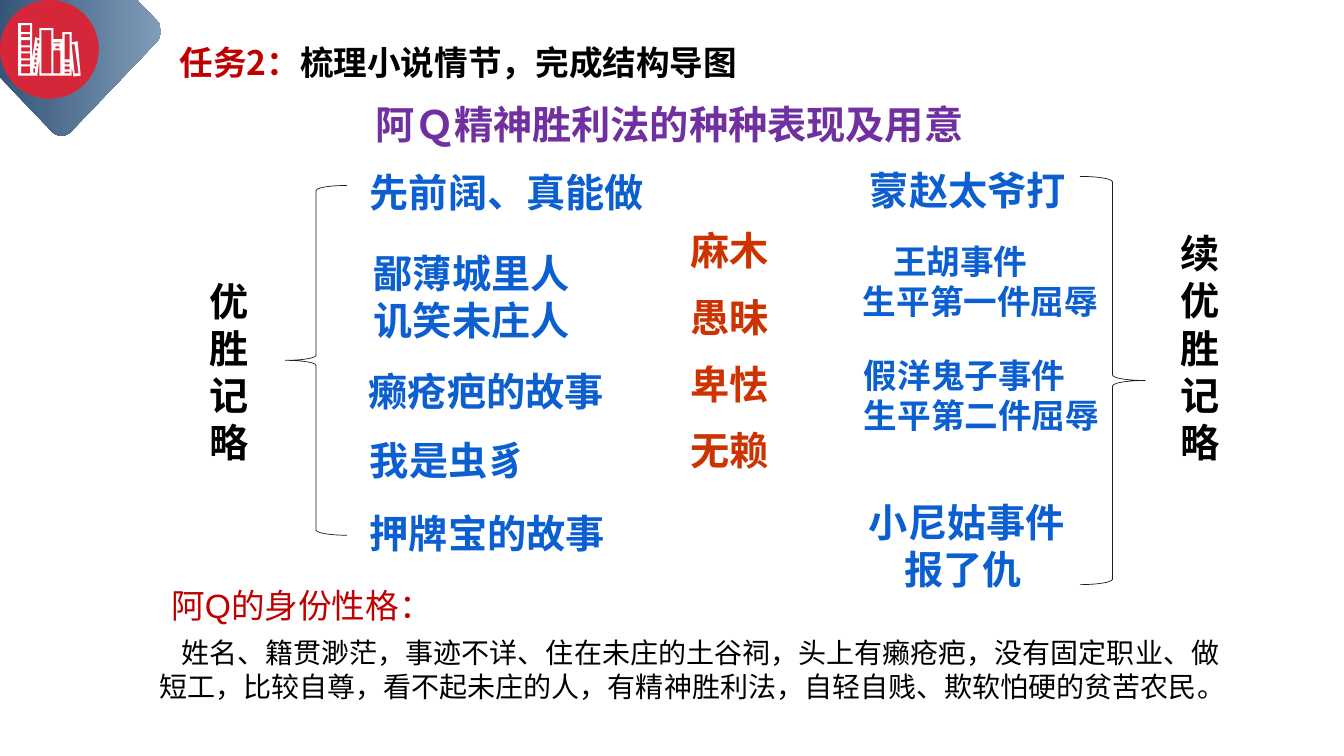
from pptx import Presentation
from pptx.dml.color import RGBColor
from pptx.enum.shapes import MSO_SHAPE
from pptx.enum.text import MSO_ANCHOR, MSO_AUTO_SIZE, PP_ALIGN
from pptx.util import Inches, Pt
from lxml.etree import SubElement
from pptx.oxml.ns import qn

SANS, CJK = "Arial", "Noto Sans CJK SC"
RED = RGBColor(0xC0, 0x00, 0x00)
CRIMSON = RGBColor(0xD5, 0x27, 0x39)
ORANGE = RGBColor(0xCC, 0x33, 0x00)
PURPLE = RGBColor(0x70, 0x30, 0xA0)
BLUE = RGBColor(0x0B, 0x5F, 0xD1)
BLACK = RGBColor(0x00, 0x00, 0x00)
WHITE = RGBColor(0xFF, 0xFF, 0xFF)
BRACE_INK = RGBColor(0x21, 0x1D, 0x1E)
SLATE, MIST = RGBColor(0x35, 0x56, 0x78), RGBColor(0x7F, 0x9C, 0xB9)


def write_run(paragraph, text, color, size, bold=True, font=SANS):
    """Append one formatted run, with the CJK face for Chinese characters."""
    run = paragraph.add_run()
    run.text = text
    for name, value in {"name": font, "size": Pt(size), "bold": bold}.items():
        setattr(run.font, name, value)
    run.font.color.rgb = color
    SubElement(run.font._element, qn("a:ea")).set("typeface", CJK)


def place_text(slide, box, lines, color, size=28, wrap=False, gap=0, indents=(), **style):
    """Put one paragraph per line in a text box, with optional first-line indents."""
    text_box = slide.shapes.add_textbox(*map(Inches, box))
    frame = text_box.text_frame
    frame.word_wrap = wrap
    frame.auto_size = MSO_AUTO_SIZE.SHAPE_TO_FIT_TEXT
    for index, line in enumerate(lines):
        paragraph = frame.add_paragraph() if index else frame.paragraphs[0]
        paragraph.space_before = Pt(gap if index else 0)
        write_run(paragraph, line, color, size, **style)
        if index < len(indents):
            paragraph._p.get_or_add_pPr().set("indent", str(Inches(indents[index])))


def curve(start, control_1, control_2, end, steps=8):
    """Sample a cubic curve into points after its start."""
    points = []
    for step in range(1, steps + 1):
        t = step / steps
        weights = ((1 - t) ** 3, 3 * t * (1 - t) ** 2, 3 * t * t * (1 - t), t ** 3)
        points.append(tuple(
            sum(w * p[axis] for w, p in zip(weights, (start, control_1, control_2, end)))
            for axis in (0, 1)))
    return points


def draw_outline(slide, left, top, contours):
    """Build one borderless shape from closed contours given in inches."""
    contours = [[(Inches(left + x), Inches(top + y)) for x, y in points]
                for points in contours]
    builder = slide.shapes.build_freeform(*contours[0][0], scale=1.0)
    for index, points in enumerate(contours):
        if index:
            builder.move_to(*points[0])
        builder.add_line_segments(points[1:], close=True)
    outline = builder.convert_to_shape()
    outline.shadow.inherit = False
    outline.line.fill.background()
    return outline


def rectangle(left, top, right, bottom):
    """Return the corners of an upright rectangle."""
    return [(left, top), (right, top), (right, bottom), (left, bottom)]


def draw_books(slide, left, top):
    """Draw the row of books as a silhouette with cut-out pages."""
    silhouette = [
        (0, 0), (0.14, 0), (0.14, 0.35), (0.17, 0.14), (0.21, 0.15), (0.21, 0.05),
        (0.35, 0.05), (0.35, 0.16), (0.44, 0.16), (0.44, 0.09), (0.53, 0.09),
        (0.53, 0.19), (0.59, 0.18), (0.62, 0.52), (0.55, 0.53), (0.53, 0.43),
        (0.53, 0.52), (0.21, 0.52), (0.21, 0.36), (0.19, 0.52), (0, 0.52)]
    first_book = [rectangle(0.03, y, 0.12, y + height) for y, height in (
        (0.02, 0.07), (0.11, 0.03), (0.17, 0.05), (0.24, 0.04),
        (0.30, 0.05), (0.37, 0.04), (0.43, 0.07))]
    leaning_book = [
        [(x, y), (x + 0.02, y), (x + 0.02, y + height), (x, y + height)]
        for x, y, height in (
            (0.19, 0.17, 0.03), (0.18, 0.23, 0.02), (0.17, 0.27, 0.03),
            (0.17, 0.32, 0.02), (0.16, 0.36, 0.03), (0.16, 0.41, 0.02),
            (0.15, 0.45, 0.04))]
    upright_books = [rectangle(*page) for page in (
        (0.23, 0.07, 0.33, 0.50), (0.35, 0.19, 0.42, 0.20), (0.37, 0.23, 0.41, 0.25),
        (0.35, 0.27, 0.42, 0.50), (0.46, 0.11, 0.51, 0.36), (0.46, 0.39, 0.51, 0.41),
        (0.46, 0.43, 0.51, 0.46), (0.46, 0.48, 0.51, 0.50))]
    last_book = [[(0.53, 0.21), (0.56, 0.21), (0.60, 0.50), (0.56, 0.50)]]
    books = draw_outline(slide, left, top, [silhouette] + first_book + leaning_book
                         + upright_books + last_book)
    books.fill.solid()
    books.fill.fore_color.rgb = WHITE


def corner_badge(slide, left, top):
    """Draw the rounded corner, the red disc and the books."""
    corner = [(0, 0), (1.36, 0), (1.56, 0.21)]
    corner += curve((1.56, 0.21), (1.61, 0.27), (1.61, 0.35), (1.56, 0.41))
    corner += [(0.7, 1.31)]
    corner += curve((0.7, 1.31), (0.65, 1.36), (0.57, 1.36), (0.52, 1.31))
    corner += [(0, 0.77)]
    backdrop = draw_outline(slide, left, top, [corner])
    backdrop.fill.gradient()
    backdrop.fill.gradient_angle = 0
    for stop, color in zip(backdrop.fill.gradient_stops, (SLATE, MIST)):
        stop.color.rgb = color
    disc = slide.shapes.add_shape(
        MSO_SHAPE.OVAL, Inches(left), Inches(top), Inches(0.98), Inches(0.98))
    disc.shadow.inherit = False
    disc.fill.solid()
    disc.fill.fore_color.rgb = CRIMSON
    disc.line.fill.background()
    draw_books(slide, left + 0.18, top + 0.23)


def task_title(slide, box):
    """Move and format the title placeholder."""
    title = slide.shapes.title
    for name, value in zip(("left", "top", "width", "height"), box):
        setattr(title, name, Inches(value))
    frame = title.text_frame
    for name, value in {"word_wrap": True, "auto_size": MSO_AUTO_SIZE.NONE,
                        "vertical_anchor": MSO_ANCHOR.TOP}.items():
        setattr(frame, name, value)
    paragraph = frame.paragraphs[0]
    paragraph.alignment = PP_ALIGN.LEFT
    write_run(paragraph, "任务2：", RED, 24, font=CJK)
    write_run(paragraph, "梳理小说情节，完成结构导图", BLACK, 24, font=CJK)


def brace(slide, kind, box):
    """Draw a thin unfilled brace."""
    bracket = slide.shapes.add_shape(kind, *map(Inches, box))
    bracket.shadow.inherit = False
    bracket.fill.background()
    bracket.line.color.rgb = BRACE_INK
    bracket.line.width = Pt(0.5)


def first_chapter(slide, left, top):
    """Place the first chapter's name, brace and episodes."""
    place_text(slide, (left, top + 1.08, 0.92, 1.99), ["优胜记略"], BLACK, wrap=True)
    brace(slide, MSO_SHAPE.LEFT_BRACE, (left + 0.85, top + 0.22, 0.61, 3.47))
    for x, y, width, lines in (
            (1.59, 0, 2.96, ["先前阔、真能做"]),
            (1.63, 0.8, 2.17, ["鄙薄城里人", "讥笑未庄人"]),
            (1.58, 1.97, 2.57, ["癞疮疤的故事"]),
            (1.59, 2.66, 1.78, ["我是虫豸"]),
            (1.59, 3.38, 2.57, ["押牌宝的故事"])):
        place_text(slide, (left + x, top + y, width, 0.1 + 0.47 * len(lines)), lines, BLUE)


def second_chapter(slide, left, top):
    """Place the second chapter's episodes, brace and name."""
    for x, y, width, size, lines, indents in (
            (0.07, 0, 2.17, 28, ["蒙赵太爷打"], ()),
            (0, 0.74, 2.57, 24, ["王胡事件", "生平第一件屈辱"], (0.3,)),
            (0.01, 1.87, 2.57, 24, ["假洋鬼子事件", "生平第二件屈辱"], ()),
            (0.06, 3.29, 2.24, 28, ["小尼姑事件", "报了仇"], (0, 0.35))):
        height = 0.1 + size / 60 * len(lines)
        place_text(slide, (left + x, top + y, width, height), lines, BLUE, size,
                   indents=indents)
    brace(slide, MSO_SHAPE.RIGHT_BRACE, (left + 2.25, top + 0.15, 0.65, 4.05))
    place_text(slide, (left + 3.15, top + 0.63, 0.92, 2.46), ["续优胜记略"], BLACK, wrap=True)


def character_profile(slide, left, top):
    """Place the profile heading and its paragraph."""
    place_text(slide, (left + 0.12, top, 9.68, 0.5), ["阿Q的身份性格："], RED, 24,
               wrap=True, bold=False)
    place_text(slide, (left, top + 0.51, 10.96, 0.77), [
        "姓名、籍贯渺茫，事迹不详、住在未庄的土谷祠，头上有癞疮疤，没有固定职业、做短工，"
        "比较自尊，看不起未庄的人，有精神胜利法，自轻自贱、欺软怕硬的贫苦农民。"],
        BLACK, 20, wrap=True, indents=(0.22,), bold=False, font=CJK)


def main():
    """Build the slide and save it."""
    deck = Presentation()
    deck.slide_width, deck.slide_height = Inches(13.33), Inches(7.5)
    slide = deck.slides.add_slide(deck.slide_layouts[5])
    corner_badge(slide, 0, 0)
    task_title(slide, (1.68, 0.37, 5.94, 0.5))
    place_text(slide, (3.63, 0.95, 8.81, 0.57), ["阿Ｑ精神胜利法的种种表现及用意"], PURPLE,
               wrap=True, font=CJK)
    first_chapter(slide, 1.98, 1.62)
    place_text(slide, (6.75, 2.2, 1.11, 2.69), ["麻木", "愚昧", "卑怯", "无赖"], ORANGE,
               wrap=True, gap=14)
    second_chapter(slide, 8.46, 1.6)
    character_profile(slide, 1.48, 5.75)
    deck.save("out.pptx")


if __name__ == "__main__":
    main()
